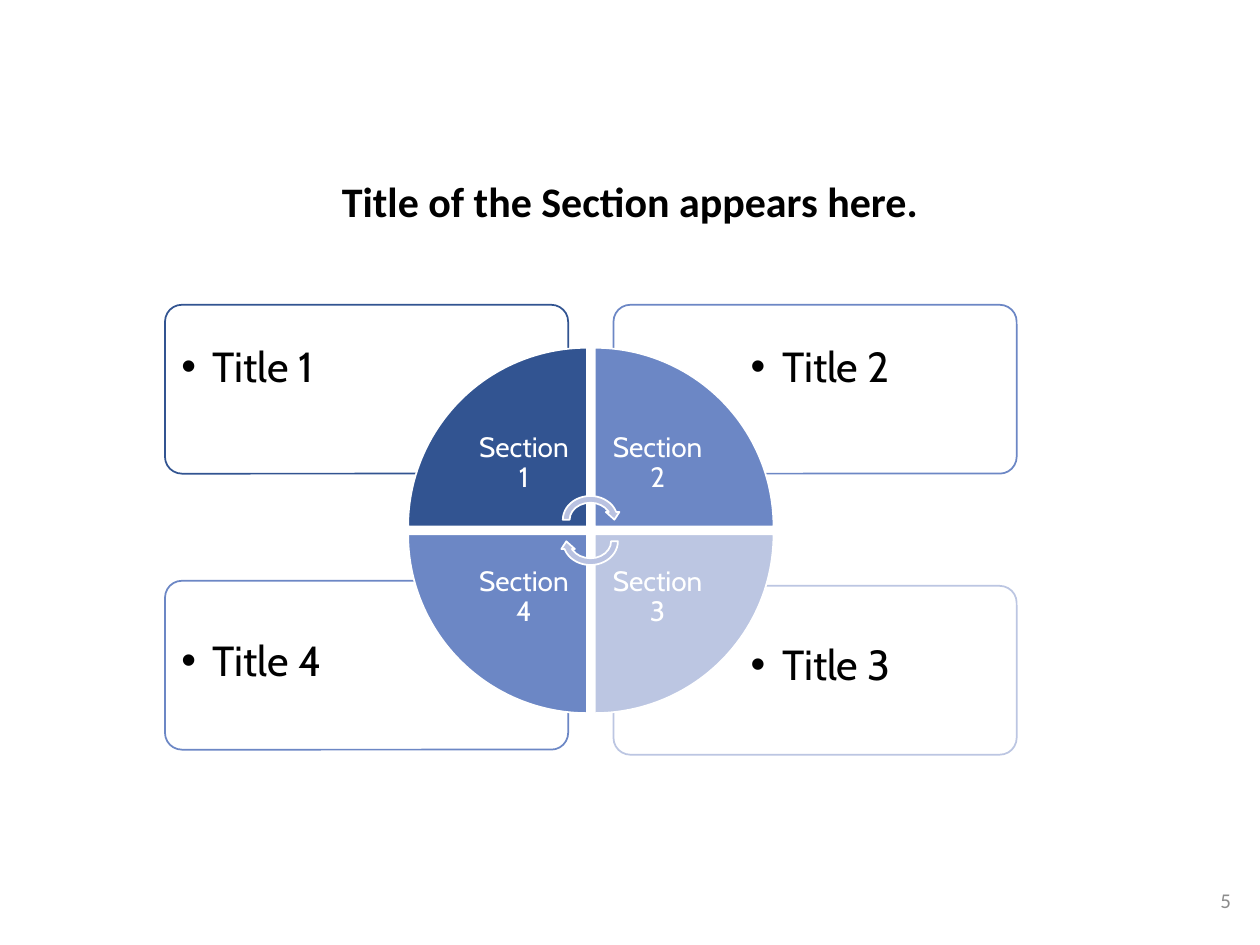
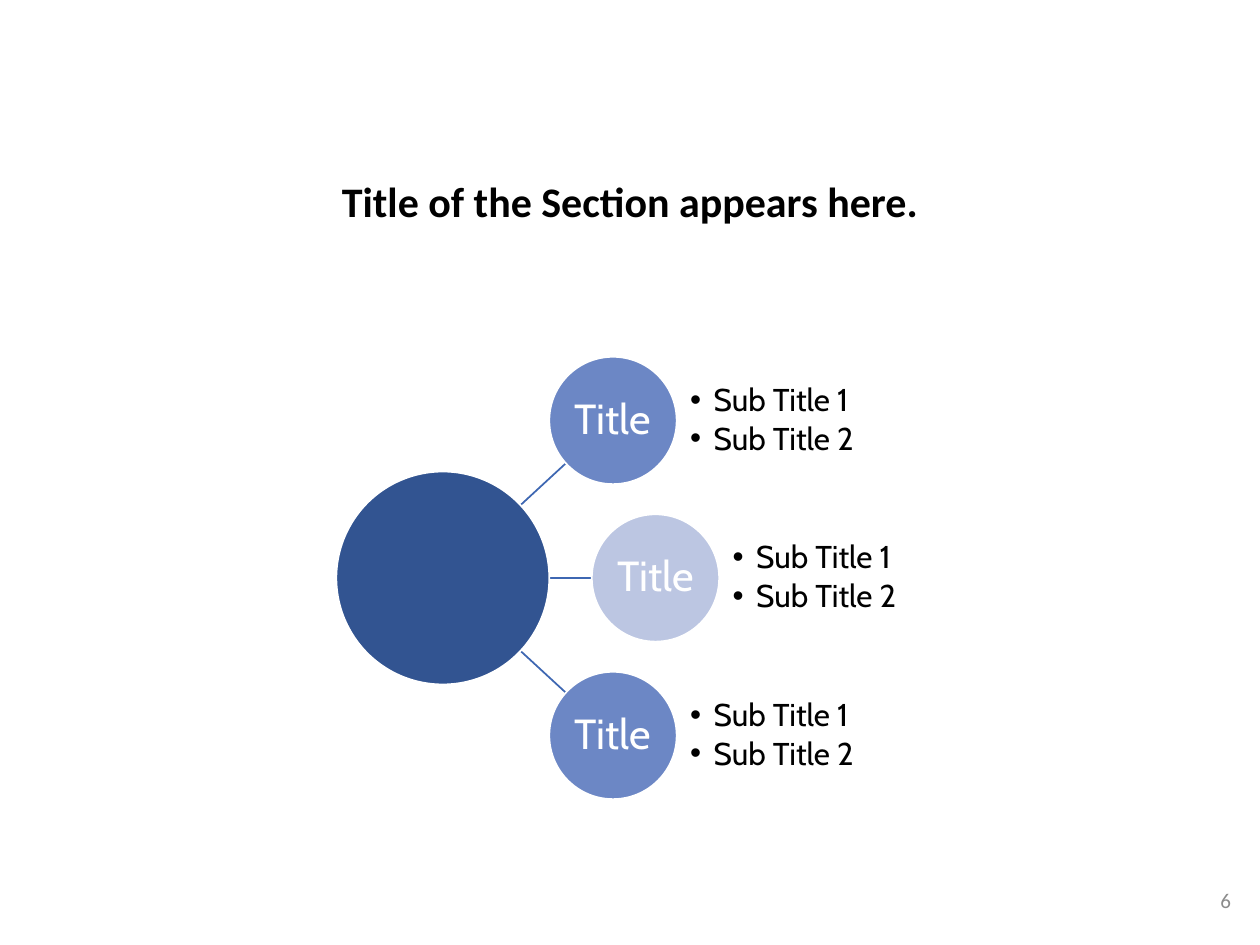
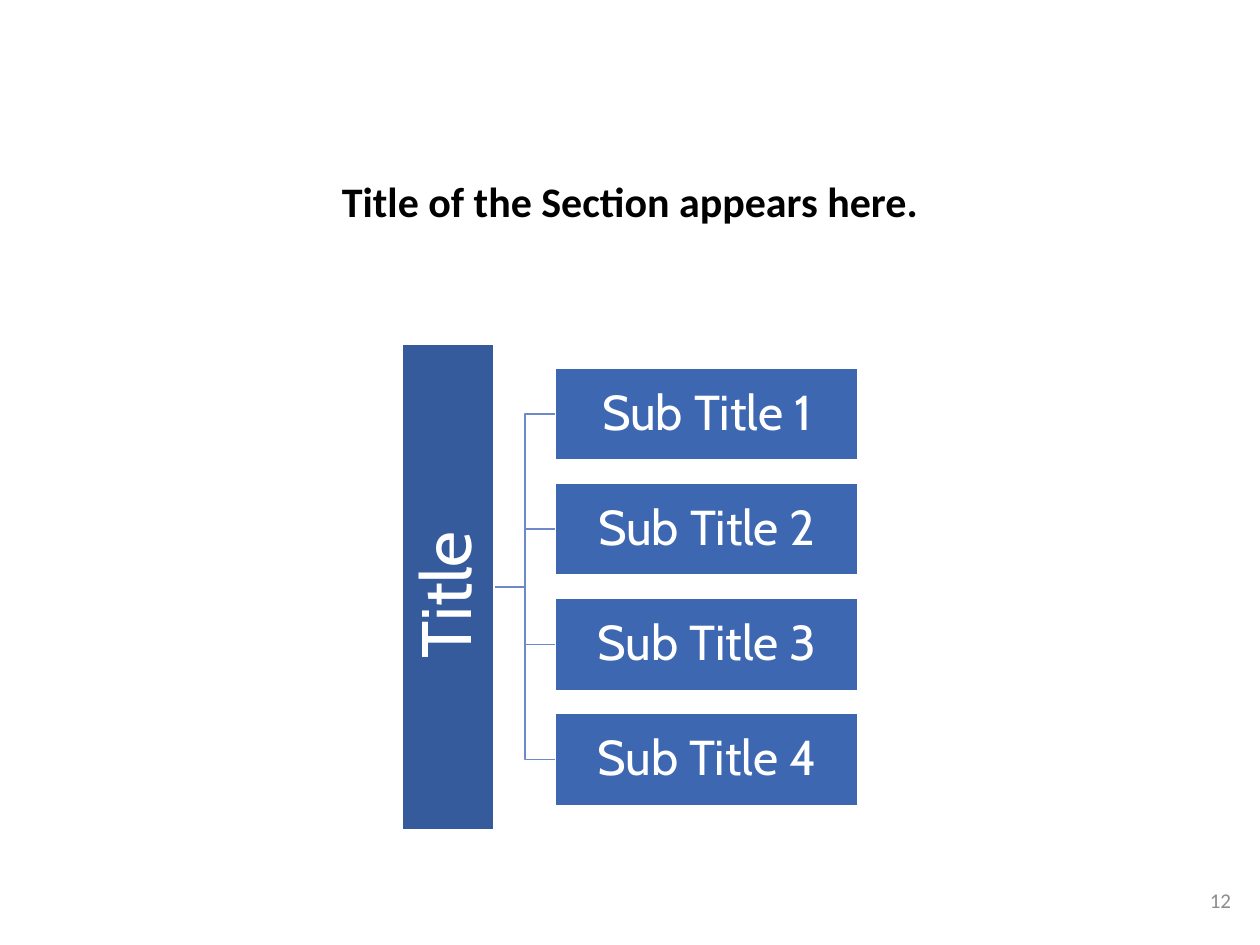
from lxml import etree
from pptx import Presentation, util as u
from pptx.dml import color
from pptx.enum import shapes, text
from pptx.oxml import ns

Pt = u.Pt
Kind = shapes.MSO_SHAPE
Link = shapes.MSO_CONNECTOR
Align = text.PP_ALIGN
Anchor = text.MSO_ANCHOR

NAVY, BLUE, PALE = "325491", "6C87C5", "BCC6E2"
ROYAL, WHITE, BLACK = "3E67B2", "FFFFFF", "000000"


def rgb(code):
    return color.RGBColor.from_string(code)


class Deck:
    """Holds the shared style and the slide being built."""

    face = "Cabin"
    plain = "Calibri"

    def __init__(self):
        self.prs = Presentation()
        self.prs.slide_width, self.prs.slide_height = Pt(720), Pt(540)

    def page(self, title, number):
        self.slide = self.prs.slides.add_slide(self.prs.slide_layouts[5])
        head = self.slide.shapes.title
        head.left, head.top, head.width, head.height = Pt(130.3), Pt(100), Pt(459.4), Pt(57)
        self.fill_text(head, [title], 24, BLACK, anchor=Anchor.TOP, face=self.plain, bold=True)
        self.label(548.6, 501, 162, 28.8, [number], 12, "8C8C8C", align=Align.RIGHT,
                   face=self.plain, pads=(7.2, 3.6))

    def fill_text(self, shape, lines, size, ink, align=Align.CENTER, anchor=Anchor.MIDDLE,
                  face=None, bold=False, pads=(7.2, 3.6), indent=0, after=0):
        frame = shape.text_frame
        frame.word_wrap = True
        frame.auto_size = text.MSO_AUTO_SIZE.NONE
        frame.vertical_anchor = anchor
        frame.margin_left = frame.margin_right = Pt(pads[0])
        frame.margin_top = frame.margin_bottom = Pt(pads[1])
        frame.text = "\n".join(lines)
        for para in frame.paragraphs:
            para.alignment = align
            para.line_spacing = 0.9
            para.space_before, para.space_after = Pt(0), Pt(after)
            if indent:
                self.bullet(para, indent)
            font = para.font
            font.name, font.size, font.bold = face or self.face, Pt(size), bold
            font.color.rgb = rgb(ink)

    def bullet(self, para, indent):
        props = para._p.get_or_add_pPr()
        props.set("marL", str(Pt(indent)))
        props.set("indent", str(-Pt(indent)))
        etree.SubElement(props, ns.qn("a:buFont")).set("typeface", "Arial")
        etree.SubElement(props, ns.qn("a:buChar")).set("char", "•")

    def label(self, x, y, w, h, lines, size, ink, **style):
        box = self.slide.shapes.add_textbox(Pt(x), Pt(y), Pt(w), Pt(h))
        self.fill_text(box, lines, size, ink, **style)

    def points(self, x, y, w, h, lines, size, indent, pad=0, anchor=Anchor.MIDDLE):
        self.label(x, y, w, h, lines, size, BLACK, align=Align.LEFT, anchor=anchor,
                   pads=(pad, pad), indent=indent, after=size * 0.15)

    def shape(self, kind, x, y, w, h, fill, line=WHITE, turn=0):
        item = self.slide.shapes.add_shape(kind, Pt(x), Pt(y), Pt(w), Pt(h))
        item.shadow.inherit = False
        item.fill.solid()
        item.fill.fore_color.rgb = rgb(fill)
        item.line.color.rgb = rgb(line)
        item.line.width = Pt(1)
        item.rotation = turn
        return item

    def link(self, kind, start, end, ink):
        line = self.slide.shapes.add_connector(kind, *map(Pt, start + end))
        line.line.color.rgb = rgb(ink)
        line.line.width = Pt(1)
        etree.SubElement(line._element.spPr, ns.qn("a:effectLst"))


def cycle(deck):
    mid_x, mid_y, gap, wedge, side = 337.6, 303.1, 2.2, 102.2, 72
    parts = [
        (1, NAVY, 0, 0, 174.2, 176.4),
        (2, BLUE, 1, 0, 174.2, 176.4),
        (3, PALE, 1, 1, 334.8, 360.7),
        (4, BLUE, 0, 1, 331.9, 358.6),
    ]
    for num, tint, col, row, top, list_top in reversed(parts):
        frame = deck.shape(Kind.ROUNDED_RECTANGLE, (94.3, 350.6)[col], top, 230.4, 96.5,
                           WHITE, tint)
        frame.adjustments[0] = 0.1
        deck.points((96.5, 421.9)[col], list_top, 157, 68.4, [f"Title {num}"], 24, 18, 7.2,
                    Anchor.TOP if row else Anchor.MIDDLE)
    for num, tint, col, row, *_ in parts:
        def place(size):
            return (mid_x + (gap if col else -gap - size),
                    mid_y + (gap if row else -gap - size), size, size)
        deck.shape(Kind.PIE_WEDGE, *place(wedge), tint, turn=90 * (num - 1))
        deck.label(*place(side), [f"Section {num}"], 16, WHITE, pads=(8.6, 8.6))
    for top, turn in ((281.5, 0), (293.8, 180)):
        deck.shape(Kind.CIRCULAR_ARROW, 319.7, top, 35.3, 31, "B9C2E1", turn=turn)


def radial(deck):
    mid, hub, ball, pitch = 330.3, 121.7, 72.8, 90
    for start, end in (((295.2, 39.6), (323.3, 65.5)), ((295.2, 0), (338.4, 0)),
                       ((295.2, -39.6), (323.3, -65.5))):
        deck.link(Link.STRAIGHT, (start[0], mid + start[1]), (end[0], mid + end[1]), ROYAL)
    deck.shape(Kind.OVAL, 192.2, mid - hub / 2, hub, hub, NAVY)
    for row, (left, tint) in enumerate(((313.9, BLUE), (338.2, PALE), (313.9, BLUE))):
        top = mid + (row - 1) * pitch - ball / 2
        disc = deck.shape(Kind.OVAL, left, top, ball, ball, tint)
        deck.fill_text(disc, ["Title"], 24, WHITE, pads=(1.4, 1.4))
        deck.points(left + 80.4, top, 109.4, ball, ["Sub Title 1", "Sub Title 2"], 18, 13.5)


def tree(deck):
    mid, left, high, pitch, long = 335.4, 317.5, 52.6, 65.8, 277.2
    rows = [mid + (row - 1.5) * pitch for row in range(4)]
    for y in rows:
        deck.link(Link.ELBOW, (282.7, mid), (left, y), "6D89CB")
    bar = deck.shape(Kind.RECTANGLE, 256.2 - long / 2, mid - high / 2, long, high,
                     "365B9D", turn=270)
    deck.fill_text(bar, ["Title "], 40, WHITE, pads=(2, 2))
    for num, y in enumerate(rows, 1):
        cell = deck.shape(Kind.RECTANGLE, left, y - high / 2, 172.8, high, ROYAL)
        deck.fill_text(cell, [f"Sub Title {num}"], 28, WHITE, pads=(1.4, 1.4))


def main():
    deck = Deck()
    for number, draw in (("5", cycle), ("6", radial), ("12", tree)):
        deck.page("Title of the Section appears here.", number)
        draw(deck)
    deck.prs.save("out.pptx")


if __name__ == "__main__":
    main()
